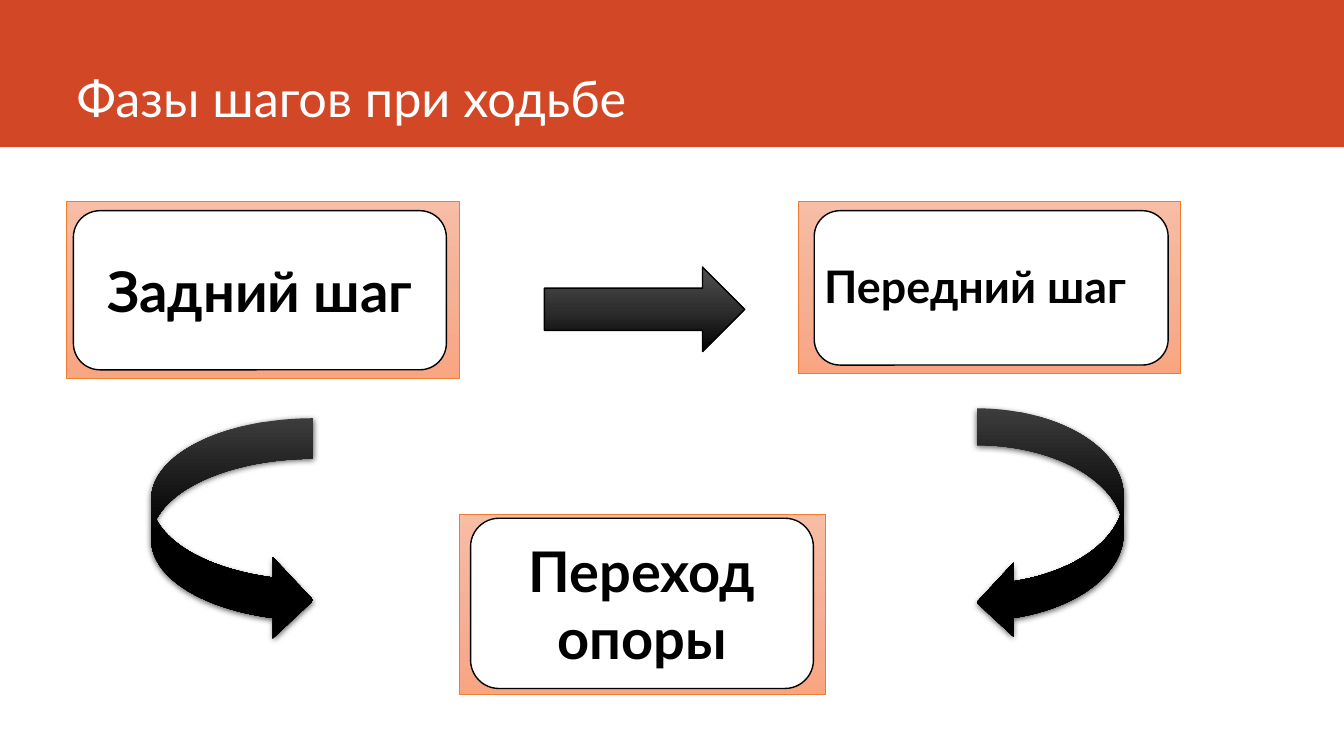
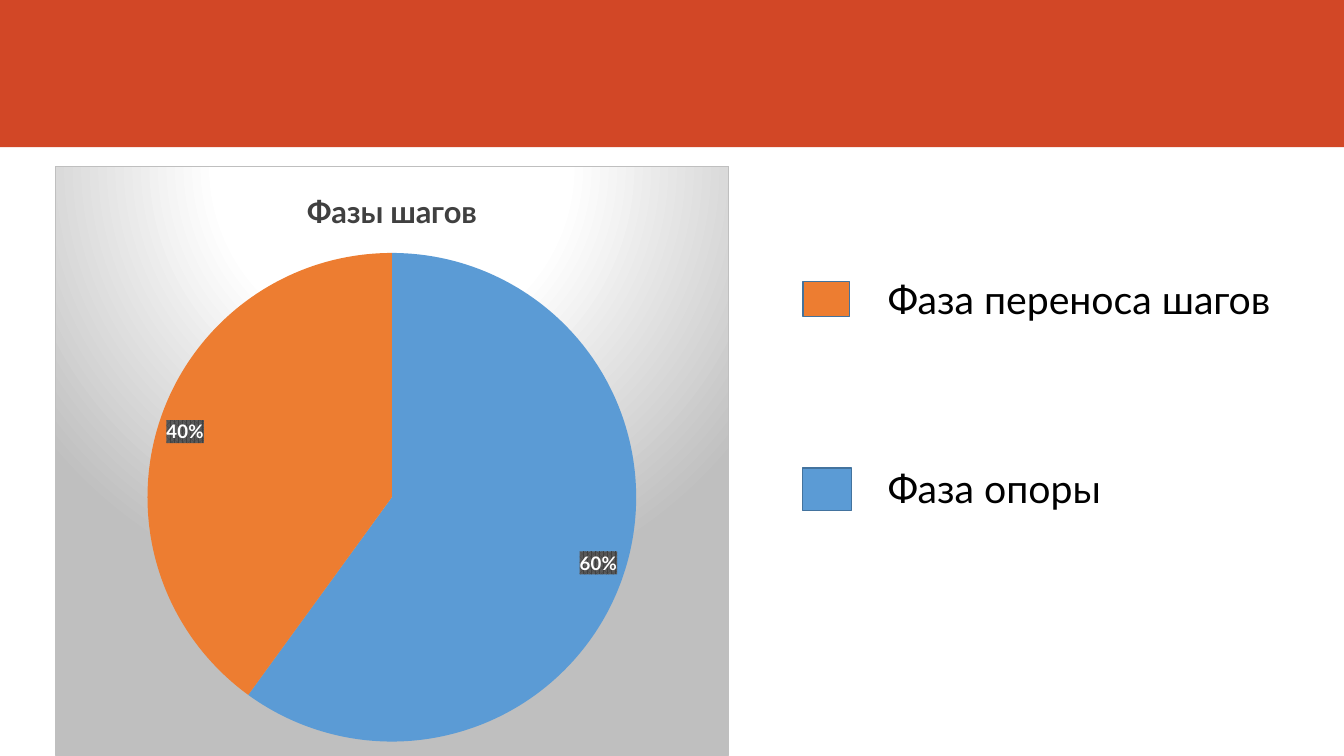
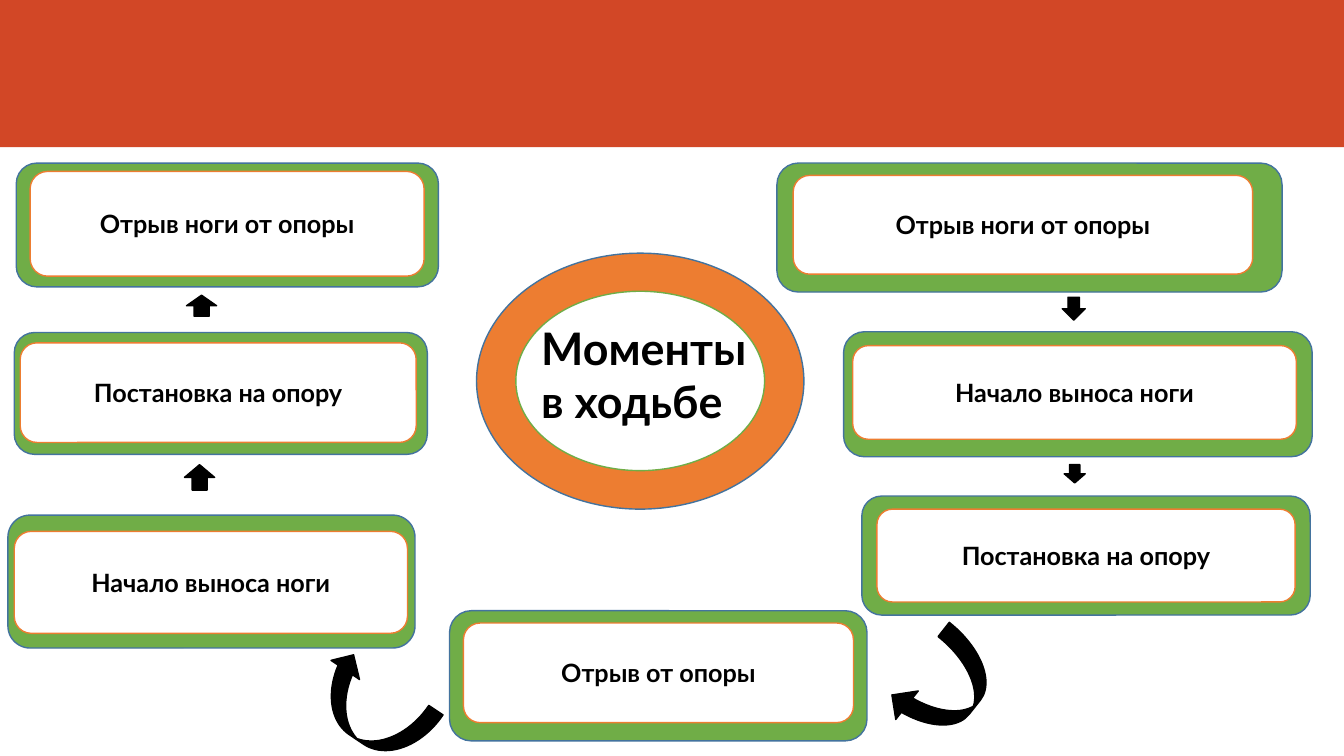
from dataclasses import dataclass
from typing import Any, Optional

from lxml.etree import SubElement
from pptx import Presentation
from pptx.chart.data import CategoryChartData as ChartData
from pptx.dml.color import RGBColor
from pptx.enum.chart import XL_CHART_TYPE as Kind, XL_LABEL_POSITION as Spot
from pptx.enum.shapes import MSO_SHAPE as Form
from pptx.enum.text import MSO_ANCHOR as Anchor, MSO_AUTO_SIZE as Fit, PP_ALIGN as Align
from pptx.oxml import parse_xml
from pptx.oxml.ns import nsdecls, qn
from pptx.util import Cm, Pt

WHITE = RGBColor(0xFF, 0xFF, 0xFF)
BLACK = RGBColor(0x00, 0x00, 0x00)
RED = RGBColor(0xD2, 0x47, 0x26)
ORANGE = RGBColor(0xED, 0x7D, 0x31)
BLUE = RGBColor(0x5B, 0x9B, 0xD5)
NAVY = RGBColor(0x43, 0x73, 0x9E)
GREEN = RGBColor(0x70, 0xAD, 0x47)
GREY = RGBColor(0x40, 0x40, 0x40)
SLATE = RGBColor(0x59, 0x59, 0x59)
SILVER = RGBColor(0xBF, 0xBF, 0xBF)
PEACH = (RGBColor(0xF7, 0xBD, 0xA5), RGBColor(0xF5, 0xB1, 0x96), RGBColor(0xF8, 0xA5, 0x82))
COAL = (RGBColor(0x51, 0x51, 0x51), RGBColor(0x2E, 0x2E, 0x2E), BLACK)
SMOKE = (RGBColor(0x4B, 0x4B, 0x4B), BLACK, BLACK)
FACE = "Lato"
WIDTH, HEIGHT = 33.87, 19.05
LINEAR = '<a:lin ang="5400000" scaled="0"/>'
RADIAL = '<a:path path="circle"><a:fillToRect l="50000" t="-80000" r="50000" b="180000"/></a:path>'

Box = tuple[float, float, float, float]


@dataclass(frozen=True)
class Look:
    """Fill, outline and outline width of a shape."""
    fill: Any
    line: Optional[RGBColor] = None
    width: float = 1


@dataclass(frozen=True)
class Card:
    """Framed card with a caption."""
    text: str
    frame: Box
    face: Box


@dataclass(frozen=True)
class Arrow:
    """Block arrow with an optional turn."""
    form: Form
    box: Box
    turn: float = 0


@dataclass(frozen=True)
class Key:
    """Legend entry: swatch and label."""
    text: str
    color: RGBColor
    swatch: Box
    label: Box


DARK = Look(BLACK, BLACK)
STEPS = (
    Card("Задний шаг", (1.68, 5.08, 9.91, 4.45), (1.85, 5.31, 9.4, 4.01)),
    Card("", (20.12, 5.08, 9.63, 4.34), (20.52, 5.31, 8.92, 3.89)),
    Card("Переход опоры", (11.58, 12.95, 9.22, 4.55), (11.86, 13.06, 8.64, 4.29)),
)
LOOPS = (
    Arrow(Form.CURVED_LEFT_ARROW, (24.61, 10.29, 3.71, 5.82)),
    Arrow(Form.CURVED_RIGHT_ARROW, (3.81, 10.54, 4.09, 5.61)),
)
KEYS = (
    Key("Фаза переноса шагов", ORANGE, (20.24, 7.09, 1.17, 0.89), (22.12, 6.81, 10.95, 1.45)),
    Key("Фаза опоры", BLUE, (20.22, 11.79, 1.24, 1.07), (22.12, 11.58, 9.8, 1.45)),
)
STAGES = (
    Card("Отрыв ноги от опоры", (0.41, 4.11, 10.64, 3.12), (0.76, 4.32, 9.93, 2.64)),
    Card("Постановка на опору", (0.36, 8.38, 10.41, 3.07), (0.51, 8.64, 9.98, 2.51)),
    Card("Начало выноса ноги", (0.2, 12.98, 10.26, 3.35), (0.36, 13.39, 9.91, 2.57)),
    Card("Отрыв от опоры", (11.33, 15.39, 10.52, 3.28), (11.68, 15.7, 9.83, 2.51)),
    Card("Постановка на опору", (21.72, 12.5, 11.3, 3), (22.1, 12.83, 10.54, 2.34)),
    Card("Начало выноса ноги", (21.26, 8.36, 11.81, 3.15), (21.49, 8.71, 11.18, 2.36)),
    Card("Отрыв ноги от опоры", (19.58, 4.11, 12.73, 3.25), (19.99, 4.42, 11.58, 2.49)),
)
MOVES = (
    Arrow(Form.DOWN_ARROW, (26.77, 7.49, 0.58, 0.58)),
    Arrow(Form.DOWN_ARROW, (26.82, 11.71, 0.53, 0.46)),
    Arrow(Form.CURVED_DOWN_ARROW, (22.38, 16.43, 2.79, 1.83), 128.3),
    Arrow(Form.CURVED_DOWN_ARROW, (7.8, 16.99, 3.15, 1.73), 213.9),
    Arrow(Form.UP_ARROW, (4.65, 11.71, 0.76, 0.64)),
    Arrow(Form.UP_ARROW, (4.7, 7.44, 0.76, 0.53)),
)


def place(box: Box) -> list[Cm]:
    """Turn a box in centimetres into lengths."""
    return [Cm(side) for side in box]


def style(font: Any, size: float, color: RGBColor = BLACK, bold: bool = False) -> None:
    """Format a font."""
    for name, value in {"name": FACE, "size": Pt(size), "bold": bold}.items():
        setattr(font, name, value)
    font.color.rgb = color


def blend(colors: tuple, shade: str = LINEAR, middle: int = 50) -> Any:
    """Build a three-stop gradient fill."""
    stops = "".join(
        f'<a:gs pos="{spot * 1000}"><a:srgbClr val="{color}"/></a:gs>'
        for spot, color in zip((0, middle, 100), colors)
    )
    return parse_xml(
        f'<a:gradFill {nsdecls("a")} rotWithShape="1"><a:gsLst>{stops}</a:gsLst>{shade}</a:gradFill>'
    )


def draw(slide: Any, form: Form, box: Box, look: Look) -> Any:
    """Add a preset shape."""
    shape = slide.shapes.add_shape(form, *place(box))
    shape.shadow.inherit = False
    if isinstance(look.fill, RGBColor):
        shape.fill.solid()
        shape.fill.fore_color.rgb = look.fill
    else:
        shape.element.spPr.find(qn("a:prstGeom")).addnext(blend(look.fill))
    if look.line is None:
        shape.line.fill.background()
    else:
        shape.line.color.rgb = look.line
        shape.line.width = Pt(look.width)
    return shape


def write(slide: Any, box: Box, text: str, size: float, bold: bool = False) -> None:
    """Add a wrapped text box, one paragraph a line."""
    frame = slide.shapes.add_textbox(*place(box)).text_frame
    frame.text = text
    for name, value in {"word_wrap": True, "auto_size": Fit.SHAPE_TO_FIT_TEXT}.items():
        setattr(frame, name, value)
    for para in frame.paragraphs:
        style(para.runs[0].font, size, bold=bold)


def deal(slide: Any, card: Card, form: Form, outer: Look, inner: Look, size: float) -> None:
    """Draw a card inside its frame."""
    draw(slide, form, card.frame, outer)
    face = draw(slide, Form.ROUNDED_RECTANGLE, card.face, inner)
    if card.text:
        face.text_frame.text = card.text
        face.text_frame.vertical_anchor = Anchor.MIDDLE
        para = face.text_frame.paragraphs[0]
        para.alignment = Align.CENTER
        style(para.runs[0].font, size, bold=True)


def point(slide: Any, arrow: Arrow, look: Look) -> Any:
    """Draw a block arrow."""
    shape = draw(slide, arrow.form, arrow.box, look)
    shape.rotation = arrow.turn
    return shape


def shade(shape: Any) -> None:
    """Give a shape a soft shadow below."""
    effect = shape.element.spPr.find(qn("a:effectLst"))
    glow = SubElement(effect, qn("a:outerShdw"), blurRad="57150", dist="19050", dir="5400000")
    color = SubElement(glow, qn("a:srgbClr"), val=str(BLACK))
    SubElement(color, qn("a:alpha"), val="63000")


def back(parent: Any, *parts: Any) -> None:
    """Put fill and line ahead of the text format of a chart part."""
    area = parse_xml(f'<c:spPr {nsdecls("c", "a")}/>')
    area.extend(parts)
    parent.find(qn("c:txPr")).addprevious(area)


def brand(deck: Any, slide: Any) -> None:
    """Put the red band on the master."""
    band = draw(slide, Form.RECTANGLE, (0, 0, WIDTH, 3.71), Look(RED))
    deck.slide_master.shapes.element.insert(2, band.element)


def steps(slide: Any) -> None:
    """Draw the step phases."""
    title = slide.shapes.title
    for name, value in zip(("left", "top", "width", "height"), place((1.68, 0, 29.87, 3.35))):
        setattr(title, name, value)
    title.text_frame.text = "Фазы шагов при ходьбе"
    title.text_frame.vertical_anchor = Anchor.BOTTOM
    para = title.text_frame.paragraphs[0]
    para.alignment = Align.LEFT
    style(para.runs[0].font, 36, WHITE)
    for card in STEPS:
        deal(slide, card, Form.RECTANGLE, Look(PEACH, ORANGE, 0.5), Look(WHITE, BLACK), 40)
    draw(slide, Form.RIGHT_ARROW, (13.72, 6.73, 5.05, 2.13), Look(COAL, BLACK))
    write(slide, (20.52, 6.4, 8.92, 1.63), "Передний шаг", 32, True)
    for loop in LOOPS:
        shade(point(slide, loop, Look(SMOKE)))


def shares(slide: Any) -> None:
    """Draw the pie of phases and its key."""
    data = ChartData(number_format="0%")
    data.categories = ["1", "2"]
    data.add_series("Фазы шагов", (0.6, 0.4))
    box = place((1.38, 4.19, 16.99, 14.86))
    chart = slide.shapes.add_chart(Kind.PIE, *box, data).chart
    style(chart.font, 10)
    chart.has_legend = False
    chart.has_title = True
    head = chart.chart_title.text_frame
    head.text = "Фазы шагов"
    style(head.paragraphs[0].runs[0].font, 22, GREY, True)
    edge = parse_xml(
        f'<a:ln {nsdecls("a")} w="9525"><a:solidFill><a:srgbClr val="{SILVER}"/></a:solidFill></a:ln>'
    )
    back(chart.element, blend((WHITE, WHITE, SILVER), RADIAL, 39), edge)
    plot = chart.plots[0]
    plot.vary_by_categories = True
    pie = plot.series[0]
    for index, color in enumerate((BLUE, ORANGE)):
        fill = pie.points[index].format.fill
        fill.solid()
        fill.fore_color.rgb = color
    labels = pie.data_labels
    style(labels.font, 13.3, WHITE, True)
    form = {"show_value": True, "show_percentage": False, "number_format": "0%",
            "number_format_is_linked": False, "position": Spot.BEST_FIT}
    for name, value in form.items():
        setattr(labels, name, value)
    weave = parse_xml(
        f'<a:pattFill {nsdecls("a")} prst="pct75"><a:fgClr><a:srgbClr val="{GREY}"/></a:fgClr>'
        f'<a:bgClr><a:srgbClr val="{SLATE}"/></a:bgClr></a:pattFill>'
    )
    back(chart.element.find(".//" + qn("c:dLbls")), weave)
    for key in KEYS:
        draw(slide, Form.RECTANGLE, key.swatch, Look(key.color, NAVY))
        write(slide, key.label, key.text, 28)


def stages(slide: Any) -> None:
    """Draw the moments of walking."""
    for card in STAGES:
        deal(slide, card, Form.ROUNDED_RECTANGLE, Look(GREEN, NAVY), Look(WHITE, ORANGE), 18)
    draw(slide, Form.OVAL, (12.01, 6.38, 8.25, 6.45), Look(ORANGE, NAVY))
    draw(slide, Form.OVAL, (13, 7.34, 6.27, 4.52), Look(WHITE, GREEN))
    write(slide, (13.39, 7.95, 6.98, 3), "Моменты\nв ходьбе", 32, True)
    for move in MOVES:
        point(slide, move, DARK)


def main() -> None:
    """Build and save the deck."""
    deck = Presentation()
    deck.slide_width, deck.slide_height = Cm(WIDTH), Cm(HEIGHT)
    titled, blank = deck.slide_layouts[5], deck.slide_layouts[6]
    first = deck.slides.add_slide(titled)
    brand(deck, first)
    steps(first)
    shares(deck.slides.add_slide(blank))
    stages(deck.slides.add_slide(blank))
    deck.save("out.pptx")


if __name__ == "__main__":
    main()
